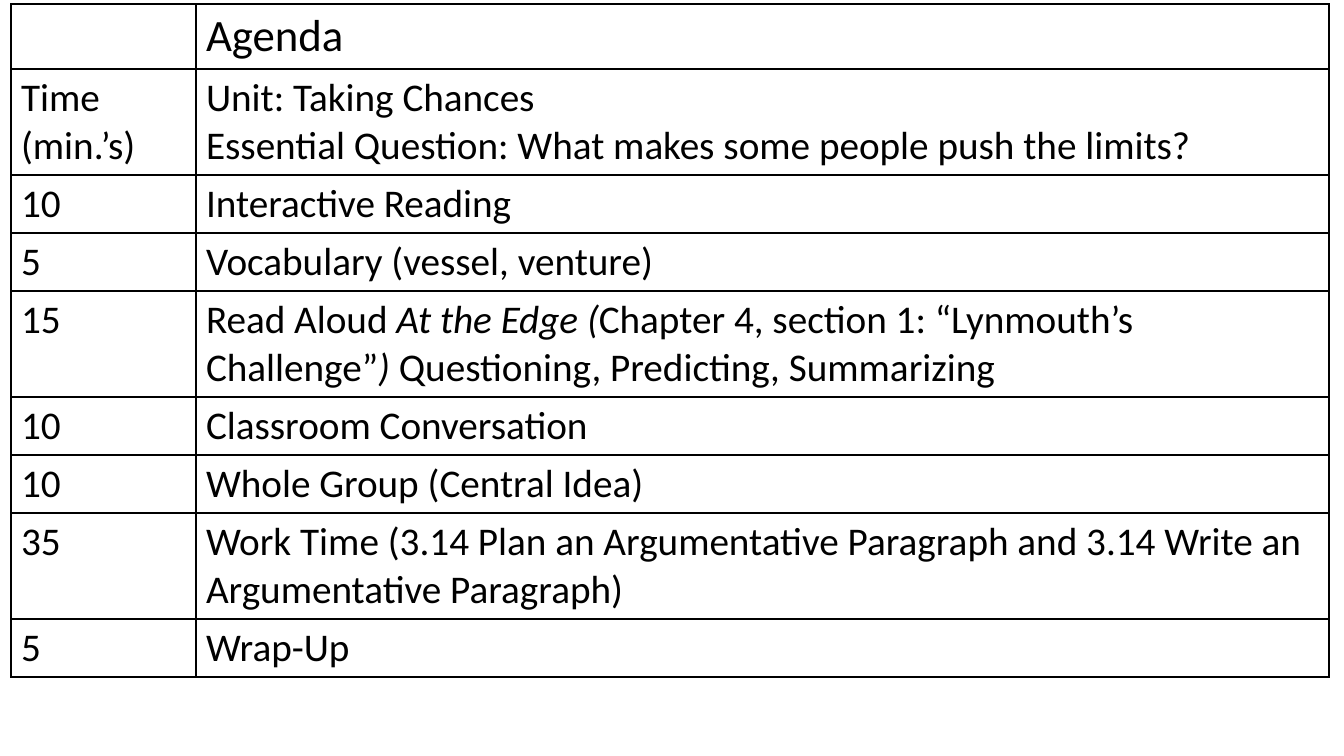
from lxml import etree
from pptx import Presentation
from pptx.dml.color import RGBColor
from pptx.enum.text import MSO_ANCHOR
from pptx.oxml.ns import qn
from pptx.util import Pt

TOP = MSO_ANCHOR.TOP
SCALE = 914400 / 100.8  # EMU per px
FONT = "Calibri"
BLACK = "000000"
LINE = 58  # row with one line of text
PAIR = 106  # row with two lines of text
COLS = [185, 1133]

# Height, time, topic; asterisks switch italics on and off
ROWS = [
    (65, "", "Agenda"),
    (PAIR, "Time\n(min.’s)",
     "Unit: Taking Chances\n"
     "Essential Question: What makes some people push the limits?"),
    (LINE, "10", "Interactive Reading"),
    (LINE, "5", "Vocabulary (vessel, venture)"),
    (PAIR, "15",
     "Read Aloud *At the Edge (*Chapter 4, section 1: “Lynmouth’s "
     "Challenge”*) *Questioning, Predicting, Summarizing"),
    (LINE, "10", "Classroom Conversation"),
    (LINE, "10", "Whole Group (Central Idea)"),
    (PAIR, "35",
     "Work Time (3.14 Plan an Argumentative Paragraph and 3.14 Write an "
     "Argumentative Paragraph)"),
    (LINE, "5", "Wrap-Up"),
]


def px(n):
    return round(n * SCALE)


def color(code):
    return RGBColor.from_string(code)


def border(cell, code, width):
    """Draw all four sides of a cell."""
    props = cell._tc.get_or_add_tcPr()
    for side in ("a:lnL", "a:lnR", "a:lnT", "a:lnB"):
        line = etree.SubElement(props, qn(side), w=str(Pt(width)))
        fill = etree.SubElement(line, qn("a:solidFill"))
        etree.SubElement(fill, qn("a:srgbClr"), val=code)


def write(cell, text, size):
    """Fill a cell, one paragraph per line of text."""
    cell.text_frame.text = text.replace("*", "")
    for para, line in zip(cell.text_frame.paragraphs, text.split("\n")):
        if "*" in line:
            para.text = ""
            for i, part in enumerate(line.split("*")):
                run = para.add_run()
                run.text = part
                run.font.italic = i % 2 == 1
        for run in para.runs:
            run.font.name = FONT
            run.font.size = Pt(size)
            run.font.color.rgb = color(BLACK)


def agenda(slide):
    """Build the agenda table."""
    high = sum(row[0] for row in ROWS)
    frame = slide.shapes.add_table(len(ROWS), len(COLS), px(11), px(4),
                                   px(sum(COLS)), px(high))
    table = frame.table
    table.first_row = False
    table.horz_banding = False
    for col, width in zip(table.columns, COLS):
        col.width = px(width)
    for r, (height, *texts) in enumerate(ROWS):
        table.rows[r].height = px(height)
        for c, text in enumerate(texts):
            cell = table.cell(r, c)
            border(cell, BLACK, 1)
            cell.fill.background()
            cell.vertical_anchor = TOP
            write(cell, text, 32 if r == 0 else 28)


def main():
    deck = Presentation()
    deck.slide_width = px(1344)
    deck.slide_height = px(756)
    slide = deck.slides.add_slide(deck.slide_layouts[6])
    agenda(slide)
    deck.save("out.pptx")


if __name__ == "__main__":
    main()
